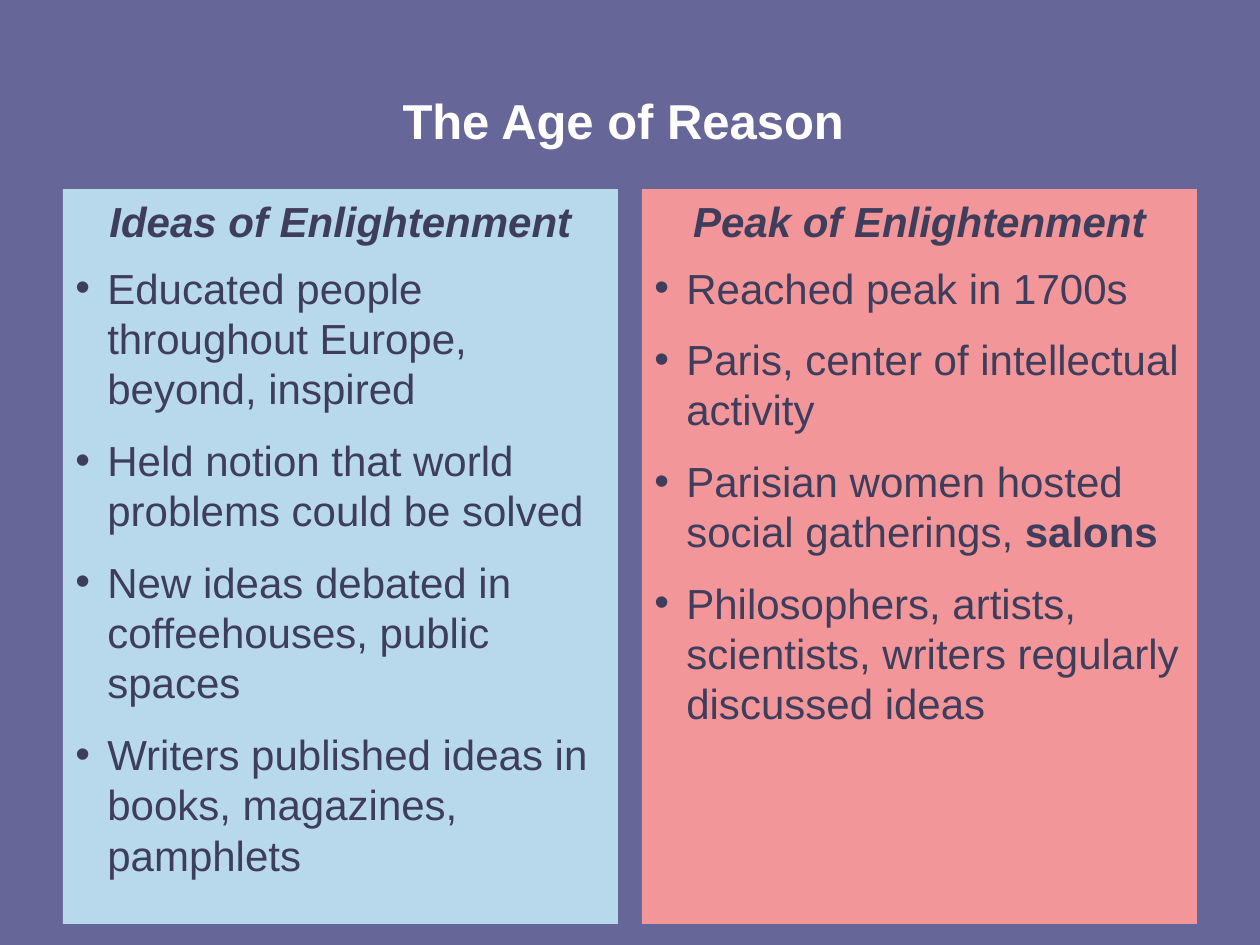
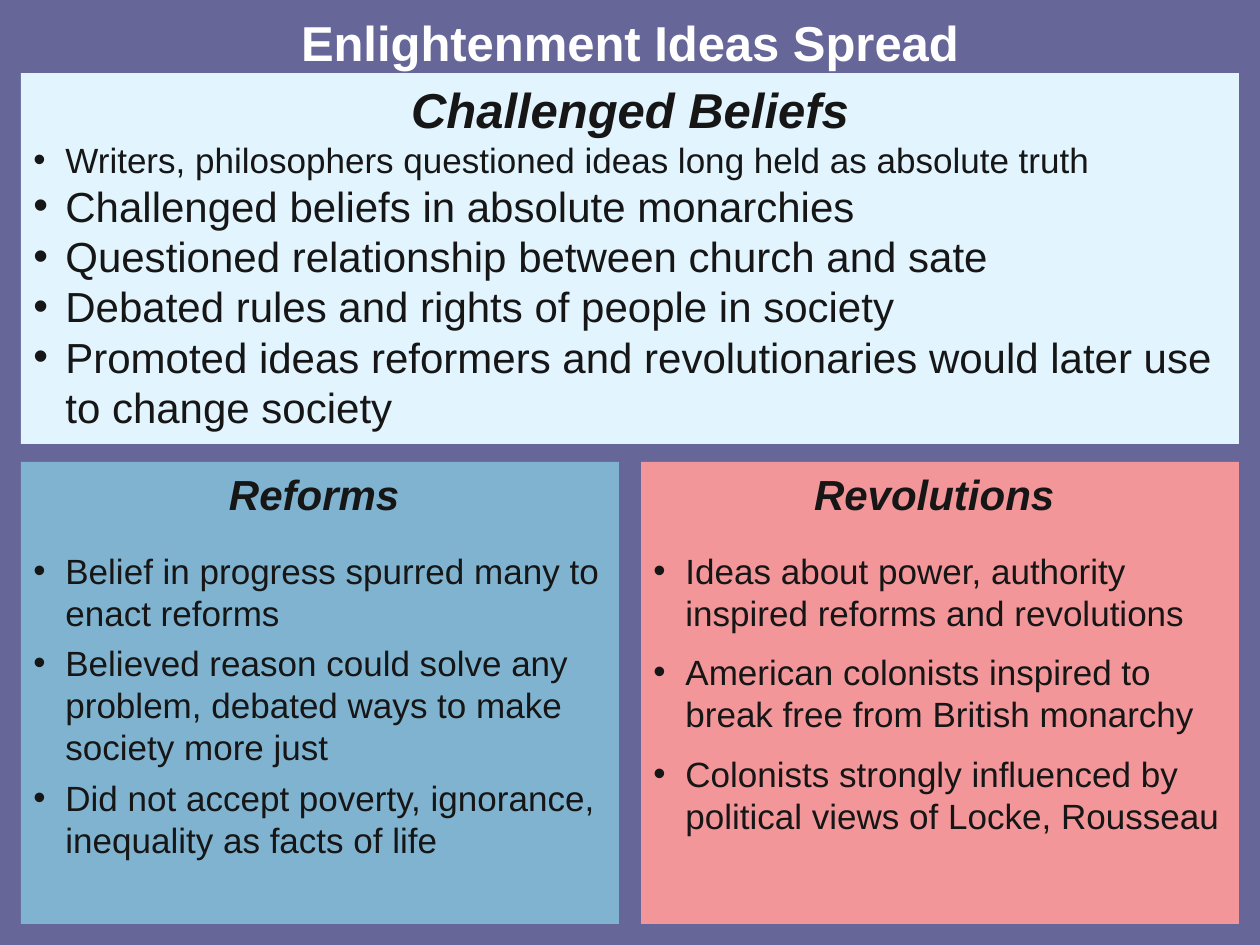
from pptx import Presentation
from pptx.dml.color import RGBColor
from pptx.enum.shapes import MSO_SHAPE as Shape
from pptx.enum.text import MSO_ANCHOR as Anchor, PP_ALIGN as Align
from pptx.util import Emu, Pt
from lxml.etree import SubElement
from pptx.oxml.ns import qn

PX = 914400 / 126
FONT = "Arial"
COLORS = {
    "page": "666699", "title": "FFFFFF", "indigo": "3E3E5C", "black": "161616",
    "pale": "E2F4FE", "sky": "B8D9EC", "blue": "80B3D0", "rose": "F29699",
}
INDENT = 32


def px(length):
    return Emu(round(length * PX))


def color(name):
    return RGBColor.from_string(COLORS[name])


def add_page(deck):
    page = deck.slides.add_slide(deck.slide_layouts[6])
    page.background.fill.solid()
    page.background.fill.fore_color.rgb = color("page")
    return page


def add_span(para, text, size, ink, bold=False, italic=False):
    span = para.add_run()
    span.text = text
    font = span.font
    font.name, font.size, font.bold, font.italic = FONT, Pt(size), bold, italic
    font.color.rgb = color(ink)


def next_para(frame):
    """Return the empty first paragraph, or a new one after the others."""
    first = frame.paragraphs[0]
    return frame.add_paragraph() if first.runs else first


def add_heading(frame, text, size, ink, italic=True):
    para = next_para(frame)
    para.alignment = Align.CENTER
    add_span(para, text, size, ink, bold=True, italic=italic)


def add_bullet(frame, item, size, ink, gap=0):
    """Add a bullet; a tuple item is plain text followed by a bold term."""
    plain, *terms = (item,) if isinstance(item, str) else item
    para = next_para(frame)
    para.alignment = Align.LEFT
    para.space_after = Pt(size * gap)
    props = para._p.get_or_add_pPr()
    props.set("marL", str(px(INDENT)))
    props.set("indent", str(px(-INDENT)))
    SubElement(props, qn("a:buFont")).set("typeface", FONT)
    SubElement(props, qn("a:buChar")).set("char", "•")
    add_span(para, plain, size, ink)
    for term in terms:
        add_span(para, term, size, ink, bold=True)


def add_title(page, top, text):
    box = page.shapes.add_textbox(px(84), px(top), px(1092), px(73))
    box.text_frame.word_wrap = True
    add_heading(box.text_frame, text, 28, "title", italic=False)


def add_panel(page, left, top, width, height, fill):
    """Add a flat filled rectangle and return its text frame."""
    box = page.shapes.add_shape(Shape.RECTANGLE, px(left), px(top), px(width), px(height))
    box.shadow.inherit = False
    box.fill.solid()
    box.fill.fore_color.rgb = color(fill)
    box.line.fill.background()
    frame = box.text_frame
    frame.word_wrap = True
    frame.vertical_anchor = Anchor.TOP
    return frame


def add_card(page, box, head_height, fill, ink, heading, items, size, gap):
    """Add a heading panel with a bullet panel directly below it."""
    left, top, width, height = box
    body = add_panel(page, left, top + head_height, width, height - head_height, fill)
    for item in items:
        add_bullet(body, item, size, ink, gap)
    head = add_panel(page, left, top, width, head_height, fill)
    add_heading(head, heading, 24, ink)


def build_age_of_reason(deck):
    page = add_page(deck)
    cards = [
        ("sky", "Ideas of Enlightenment", [
            "Educated people throughout Europe, beyond, inspired",
            "Held notion that world problems could be solved",
            "New ideas debated in coffeehouses, public spaces",
            "Writers published ideas in books, magazines, pamphlets",
        ]),
        ("rose", "Peak of Enlightenment", [
            "Reached peak in 1700s",
            "Paris, center of intellectual activity",
            ("Parisian women hosted social gatherings, ", "salons"),
            "Philosophers, artists, scientists, writers regularly discussed ideas",
        ]),
    ]
    for column, (fill, heading, items) in enumerate(cards):
        box = (63 + 579 * column, 189, 555, 735)
        add_card(page, box, 67, fill, "indigo", heading, items, 24, 0.5)
    add_title(page, 84, "The Age of Reason ")


def build_ideas_spread(deck):
    page = add_page(deck)
    beliefs = add_panel(page, 21, 73, 1218, 371, "pale")
    add_heading(beliefs, "Challenged Beliefs", 28, "black")
    add_bullet(
        beliefs, "Writers, philosophers questioned ideas long held as absolute truth", 20, "black")
    for item in (
        "Challenged beliefs in absolute monarchies",
        "Questioned relationship between church and sate",
        "Debated rules and rights of people in society",
        "Promoted ideas reformers and revolutionaries would later use to change society",
    ):
        add_bullet(beliefs, item, 24, "black")

    cards = [
        ("blue", "Reforms ", 0.25, [
            "Belief in progress spurred many to enact reforms",
            "Believed reason could solve any problem, debated ways to make society more just",
            "Did not accept poverty, ignorance, inequality as facts of life",
        ]),
        ("rose", "Revolutions ", 0.5, [
            "Ideas about power, authority inspired reforms and revolutions",
            "American colonists inspired to break free from British monarchy",
            "Colonists strongly influenced by political views of Locke, Rousseau",
        ]),
    ]
    for column, (fill, heading, gap, items) in enumerate(cards):
        box = (21 + 620 * column, 462, 598, 462)
        add_card(page, box, 81, fill, "black", heading, items, 20, gap)
    add_title(page, 6, "Enlightenment Ideas Spread")


def main():
    deck = Presentation()
    deck.slide_width, deck.slide_height = px(1260), px(945)
    build_age_of_reason(deck)
    build_ideas_spread(deck)
    deck.save("out.pptx")


if __name__ == "__main__":
    main()
